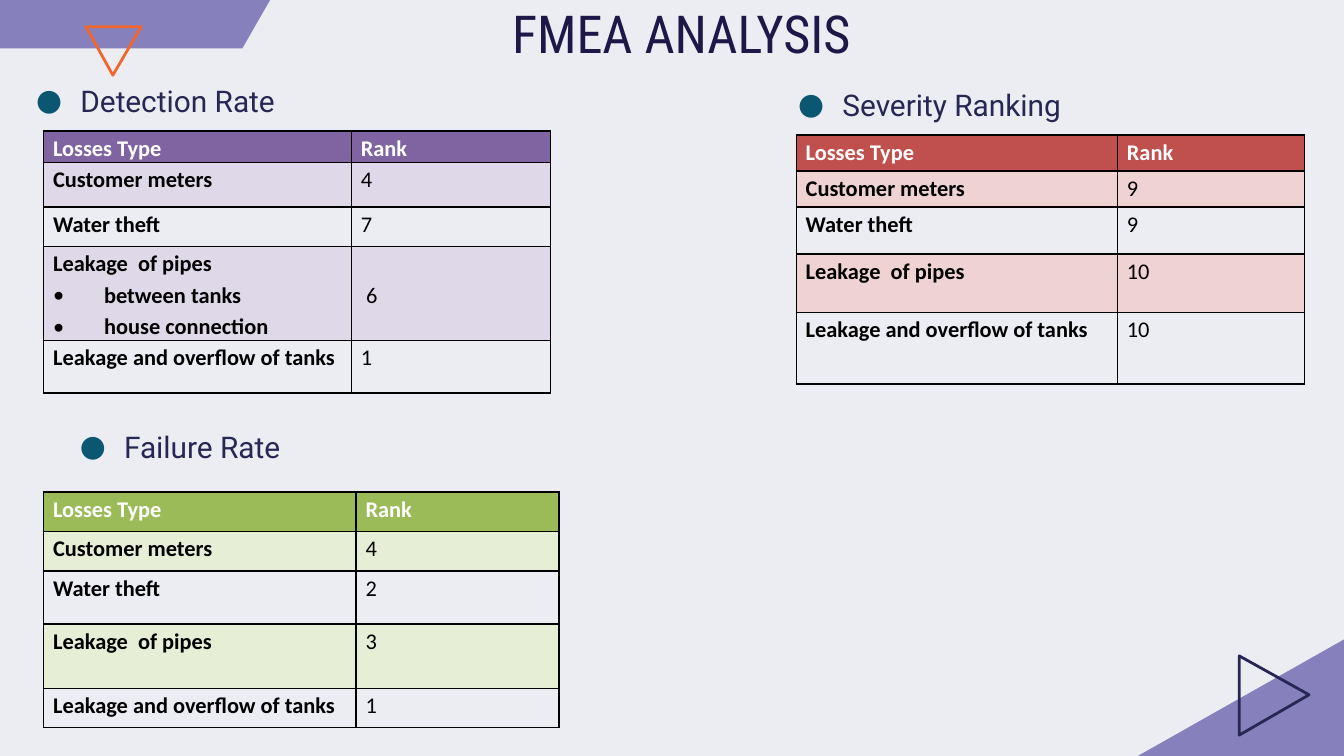
from dataclasses import dataclass

from lxml import etree
from pptx import Presentation
from pptx import util as u
from pptx.dml.color import RGBColor
from pptx.enum import shapes, text
from pptx.oxml import parse_xml
from pptx.oxml.ns import nsdecls, qn


@dataclass
class Theme:
    page: str = "ECEDF3"
    violet: str = "8680BC"
    orange: str = "F1662D"
    navy: str = "272753"
    title: str = "1D1848"
    teal: str = "0B5670"
    black: str = "000000"
    white: str = "FFFFFF"
    title_size: float = 28
    heading_size: float = 16
    table_size: float = 12
    outline: float = 1.5


theme = Theme()
deck = Presentation()
deck.slide_width = u.Inches(10)
deck.slide_height = deck.slide_width * 9 // 16
cell_size = deck.slide_width / 100  # square grid, 100 columns across


def grid(*counts):
    return [u.Emu(round(count * cell_size)) for count in counts]


def add_text(para, words, font, size, color, bold=False, bullet=None):
    """Add one run; bullet is (character, colour, indent in grid columns, hang)."""
    if bullet:
        mark, mark_color, indent, hang = bullet
        props = para._p.get_or_add_pPr()
        props.set("marL", str(grid(indent)[0]))
        props.set("indent", str(-grid(hang)[0]))
        tint = etree.SubElement(props, qn("a:buClr"))
        etree.SubElement(tint, qn("a:srgbClr"), val=mark_color)
        etree.SubElement(props, qn("a:buFont"), typeface=font)
        etree.SubElement(props, qn("a:buChar"), char=mark)
    span = para.add_run()
    span.text = words
    span.font.name, span.font.size, span.font.bold = font, u.Pt(size), bold
    span.font.color.rgb = RGBColor.from_string(color)


page = deck.slides.add_slide(deck.slide_layouts[5])
page.background.fill.solid()
page.background.fill.fore_color.rgb = RGBColor.from_string(theme.page)

# Corner decoration: hexagon at top left, diamond at bottom right, two triangles
hexagon = page.shapes.add_shape(shapes.MSO_SHAPE.HEXAGON, *grid(-2.2, -3.6, 22.3, 7.2))
hexagon.adjustments[0] = 0.286
hexagon.shadow.inherit = False
hexagon.fill.solid()
hexagon.fill.fore_color.rgb = RGBColor.from_string(theme.violet)
hexagon.line.fill.background()

# Outline points are in tenths of a grid column
outlines = [
    ([(105, 20), (84, 56), (64, 20)], None, theme.orange),
    ([(1012, 469), (1180, 564), (1012, 660), (844, 564)], theme.violet, None),
    ([(922, 488), (974, 517), (922, 547)], None, theme.navy),
]
for points, fill, line in outlines:
    builder = page.shapes.build_freeform(*points[0], scale=cell_size / 10)
    builder.add_line_segments(points[1:], close=True)
    outline = builder.convert_to_shape()
    outline.shadow.inherit = False
    for paint, color in ((outline.fill, fill), (outline.line.fill, line)):
        if color:
            paint.solid()
            paint.fore_color.rgb = RGBColor.from_string(color)
        else:
            paint.background()
    if line:
        outline.line.width = u.Pt(theme.outline)

# Title and section headings
title = page.shapes.title
title.left, title.top, title.width, title.height = grid(37.1, 0, 32.8, 5.8)
headings = [
    ("Detection Rate", (0, 5.15, 22.5, 4.6)),
    ("Failure Rate", (3.25, 30.9, 22.5, 4.6)),
    ("Severity Ranking", (56.7, 5.45, 27.2, 4.6)),
]
boxes = [title] + [page.shapes.add_textbox(*grid(*place)) for _, place in headings]
for box in boxes:
    frame = box.text_frame
    frame.word_wrap = True
    frame.auto_size = text.MSO_AUTO_SIZE.NONE
    frame.margin_left = frame.margin_right = grid(1)[0]
    frame.margin_top = frame.margin_bottom = grid(1)[0]
    frame.paragraphs[0].alignment = text.PP_ALIGN.LEFT
title.text_frame.vertical_anchor = text.MSO_ANCHOR.BOTTOM
add_text(title.text_frame.paragraphs[0], "FMEA ANALYSIS", "Roboto Condensed",
         theme.title_size, theme.title)
for box, (words, _) in zip(boxes[1:], headings):
    add_text(box.text_frame.paragraphs[0], words, "Roboto", theme.heading_size,
             theme.navy, bullet=("●", theme.teal, 5, 3.3))

# Ranking tables: place, columns, rows, header colour, band colour, ranks
losses = ["Customer meters", "Water theft", "Leakage  of pipes",
          "Leakage and overflow of tanks"]
pipe_parts = ["between tanks", "house connection"]
rankings = [
    ((3.25, 9.75), (22.9, 14.8), (2.35, 3.3, 2.93, 7, 3.93), "8064A2", "DFD8E8",
     (4, 7, 6, 1), pipe_parts),
    ((3.25, 36.63), (23.25, 15.1), (2.93, 2.93, 3.93, 4.8, 2.93), "9BBB59", "E6EED5",
     (4, 2, 3, 1), []),
    ((59.25, 10.05), (23.9, 13.9), (2.68, 2.68, 3.5, 4.35, 5.3), "C0504D", "EFD3D2",
     (9, 9, 10, 10), []),
]
for place, widths, heights, header, band, ranks, parts in rankings:
    table = page.shapes.add_table(
        len(heights), len(widths), *grid(*place, sum(widths), sum(heights))).table
    table.first_row = table.horz_banding = False
    for column, width in zip(table.columns, grid(*widths)):
        column.width = width
    for row, height in zip(table.rows, grid(*heights)):
        row.height = height

    entries = [("Losses Type", "Rank")] + list(zip(losses, map(str, ranks)))
    for row_index, entry in enumerate(entries):
        for column_index, words in enumerate(entry):
            cell = table.cell(row_index, column_index)
            cell.margin_left = cell.margin_right = grid(0.7)[0]
            cell.margin_top = cell.margin_bottom = 0
            for side in ("lnL", "lnR", "lnT", "lnB"):
                cell._tc.get_or_add_tcPr().append(parse_xml(
                    f'<a:{side} {nsdecls("a")} w="{u.Pt(1)}"><a:solidFill>'
                    f'<a:srgbClr val="{theme.black}"/></a:solidFill></a:{side}>'))
            if row_index % 2 or row_index == 0:
                cell.fill.solid()
                cell.fill.fore_color.rgb = RGBColor.from_string(
                    band if row_index else header)
            else:
                cell.fill.background()

            para = cell.text_frame.paragraphs[0]
            para.line_spacing = 1.15
            color = theme.black if row_index else theme.white
            bold = row_index == 0 or column_index == 0
            add_text(para, words, "Calibri", theme.table_size, color, bold)

            # The pipe losses of the first table are split into two kinds
            if parts and row_index == 3:
                if column_index == 0:
                    for part in parts:
                        para = cell.text_frame.add_paragraph()
                        para.line_spacing = 1.15
                        add_text(para, part, "Calibri", theme.table_size, color, bold,
                                 bullet=("•", theme.black, 3.8, 3.8))
                else:
                    cell.vertical_anchor = text.MSO_ANCHOR.MIDDLE
                    cell.margin_left = grid(1.1)[0]

deck.save("out.pptx")
